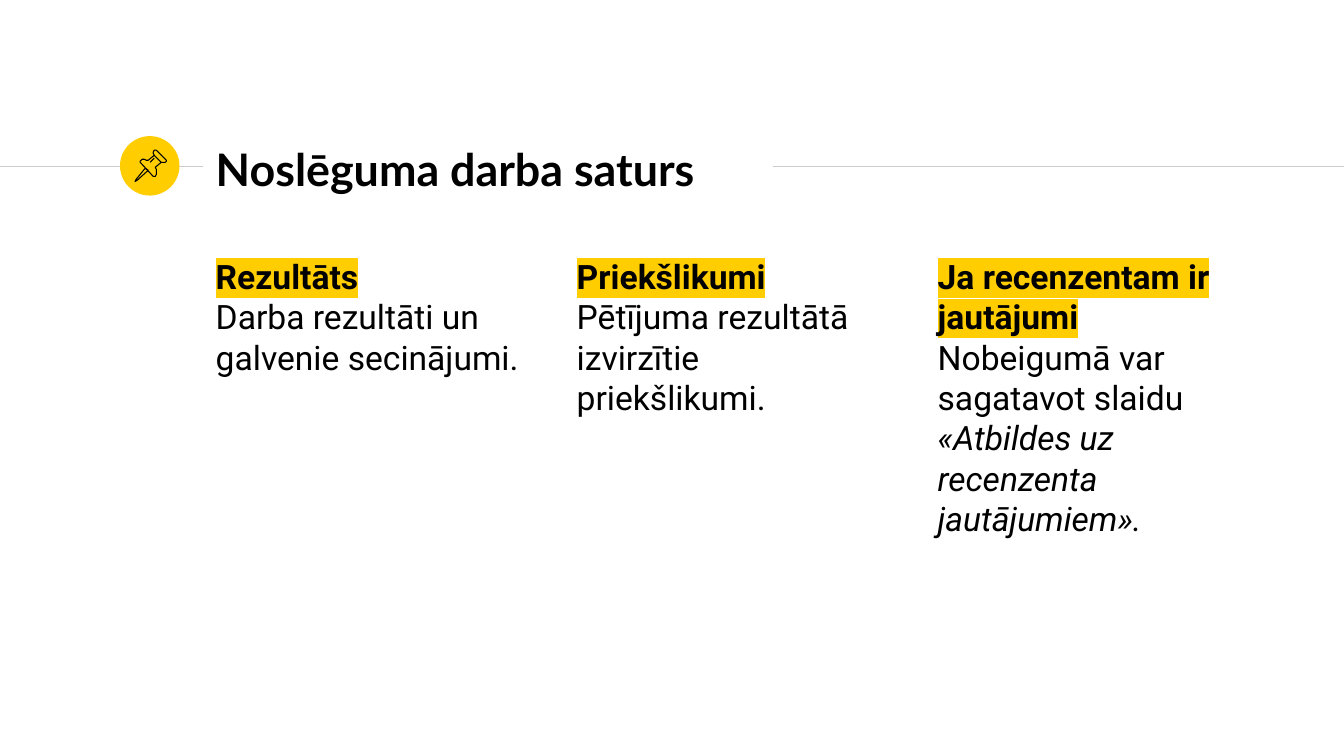
from lxml import etree
from pptx import Presentation
from pptx.dml.color import RGBColor
from pptx.enum.shapes import MSO_CONNECTOR, MSO_SHAPE
from pptx.enum.text import MSO_ANCHOR, MSO_AUTO_SIZE, PP_ALIGN
from pptx.oxml.ns import qn
from pptx.util import Inches, Pt

STRAIGHT, ELLIPSE = MSO_CONNECTOR.STRAIGHT, MSO_SHAPE.OVAL
TOP, MIDDLE = MSO_ANCHOR.TOP, MSO_ANCHOR.MIDDLE
LEFT, NO_AUTOFIT = PP_ALIGN.LEFT, MSO_AUTO_SIZE.NONE

COLORS = {"text": "000000", "accent": "FFCD00", "rule": "CCCCCC"}
COMPARISON_LAYOUT = 4

# Grid, in inches
SLIDE_WIDTH, SLIDE_HEIGHT = 13.33, 7.5
MARGIN, COLUMN_WIDTH, COLUMN_STEP = 2.01, 3.4, 3.58
TITLE_TOP, TITLE_WIDTH, TITLE_HEIGHT = 1.35, 5.66, 0.64
BODY_TOP, BODY_HEIGHT = 2.41, 4.55
RULE_Y, INSET, BADGE_LEFT, BADGE_SIZE = 1.65, 0.13, 1.19, 0.59

# Heading and following (text, italic) runs, by placeholder index
COLUMNS = {
    1: ("Rezultāts", [("Darba rezultāti un galvenie secinājumi.", False)]),
    2: ("Priekšlikumi", [("Pētījuma rezultātā izvirzītie priekšlikumi.", False)]),
    3: ("Ja recenzentam ir jautājumi", [
        ("Nobeigumā var sagatavot slaidu ", False),
        ("«Atbildes uz recenzenta jautājumiem».", True)]),
}

# Pushpin outlines in hundredths of an inch: points, closed
PIN_UNIT = Inches(0.01)
PIN_OUTLINES = [
    # Needle
    ([(144, 167), (135, 178), (134, 180), (136, 179), (147, 169)], True),
    # Cap
    ([(153, 154), (160, 161), (162, 161), (164, 161), (165, 160), (165, 159),
      (155, 149), (154, 149), (153, 149), (152, 151), (152, 152)], True),
    # Body
    ([(153, 154), (147, 159), (145, 159), (143, 158), (141, 158), (139, 160),
      (139, 161), (152, 175), (153, 175), (154, 175), (155, 173), (155, 171),
      (155, 168), (154, 166), (160, 161)], False),
    # Glint
    ([(149, 161), (153, 157)], False),
]


def rgb(name):
    return RGBColor.from_string(COLORS[name])


def add_run(paragraph, text, size=24, font="Roboto", bold=False, italic=False,
            highlight=None):
    run = paragraph.add_run()
    run.text = text
    run.font.size, run.font.bold, run.font.italic = Pt(size), bold, italic
    run.font.color.rgb = rgb("text")
    if highlight:
        mark = etree.SubElement(run.font._element, qn("a:highlight"))
        etree.SubElement(mark, qn("a:srgbClr"), val=COLORS[highlight])
    run.font.name = font


def format_paragraph(paragraph):
    paragraph.alignment = LEFT
    paragraph.space_before = paragraph.space_after = Pt(0)
    paragraph.line_spacing = 1.0
    properties = paragraph._p.get_or_add_pPr()
    properties.set("marL", "0")
    properties.set("indent", "0")
    etree.SubElement(properties, qn("a:buNone"))
    return paragraph


def place_text(shape, left, top, width, height, anchor):
    shape.left, shape.top = Inches(left), Inches(top)
    shape.width, shape.height = Inches(width), Inches(height)
    frame = shape.text_frame
    frame.word_wrap, frame.auto_size = True, NO_AUTOFIT
    frame.vertical_anchor = anchor
    frame.margin_left = frame.margin_right = Inches(INSET)
    frame.margin_top = frame.margin_bottom = Inches(INSET)
    return frame


def add_rule(slide, start, end):
    rule = slide.shapes.add_connector(
        STRAIGHT, Inches(start), Inches(RULE_Y), Inches(end), Inches(RULE_Y))
    rule.line.color.rgb, rule.line.width = rgb("rule"), Pt(0.75)
    etree.SubElement(rule._element.spPr, qn("a:effectLst"))


def add_badge(slide):
    badge = slide.shapes.add_shape(
        ELLIPSE, Inches(BADGE_LEFT), Inches(TITLE_TOP),
        Inches(BADGE_SIZE), Inches(BADGE_SIZE))
    badge.shadow.inherit = False
    badge.fill.solid()
    badge.fill.fore_color.rgb = rgb("accent")
    badge.line.fill.background()


def add_pin(slide):
    group = slide.shapes.add_group_shape()
    for points, closed in PIN_OUTLINES:
        builder = group.shapes.build_freeform(*points[0], scale=PIN_UNIT)
        builder.add_line_segments(points[1:], close=closed)
        outline = builder.convert_to_shape()
        outline.shadow.inherit = False
        outline.fill.background()
        outline.line.color.rgb, outline.line.width = rgb("text"), Pt(0.75)


def fill_column(shape, column, heading, runs):
    frame = place_text(shape, MARGIN + column * COLUMN_STEP, BODY_TOP,
                       COLUMN_WIDTH, BODY_HEIGHT, TOP)
    add_run(format_paragraph(frame.paragraphs[0]), heading, bold=True,
            highlight="accent")
    paragraph = format_paragraph(frame.add_paragraph())
    for text, italic in runs:
        add_run(paragraph, text, italic=italic)


def main():
    presentation = Presentation()
    presentation.slide_width = Inches(SLIDE_WIDTH)
    presentation.slide_height = Inches(SLIDE_HEIGHT)
    slide = presentation.slides.add_slide(
        presentation.slide_layouts[COMPARISON_LAYOUT])

    # Header
    add_rule(slide, 0, MARGIN)
    add_badge(slide)
    add_rule(slide, MARGIN + TITLE_WIDTH, SLIDE_WIDTH)
    add_pin(slide)
    title = place_text(slide.shapes.title, MARGIN, TITLE_TOP,
                       TITLE_WIDTH, TITLE_HEIGHT, MIDDLE)
    add_run(format_paragraph(title.paragraphs[0]), "Noslēguma darba saturs",
            size=32, font="Lato", bold=True)

    # Three text columns; the layout's spare placeholder goes
    for placeholder in list(slide.placeholders):
        index = placeholder.placeholder_format.idx
        if index in COLUMNS:
            fill_column(placeholder, index - 1, *COLUMNS[index])
        elif index:
            placeholder._element.getparent().remove(placeholder._element)

    presentation.save("out.pptx")


if __name__ == "__main__":
    main()
